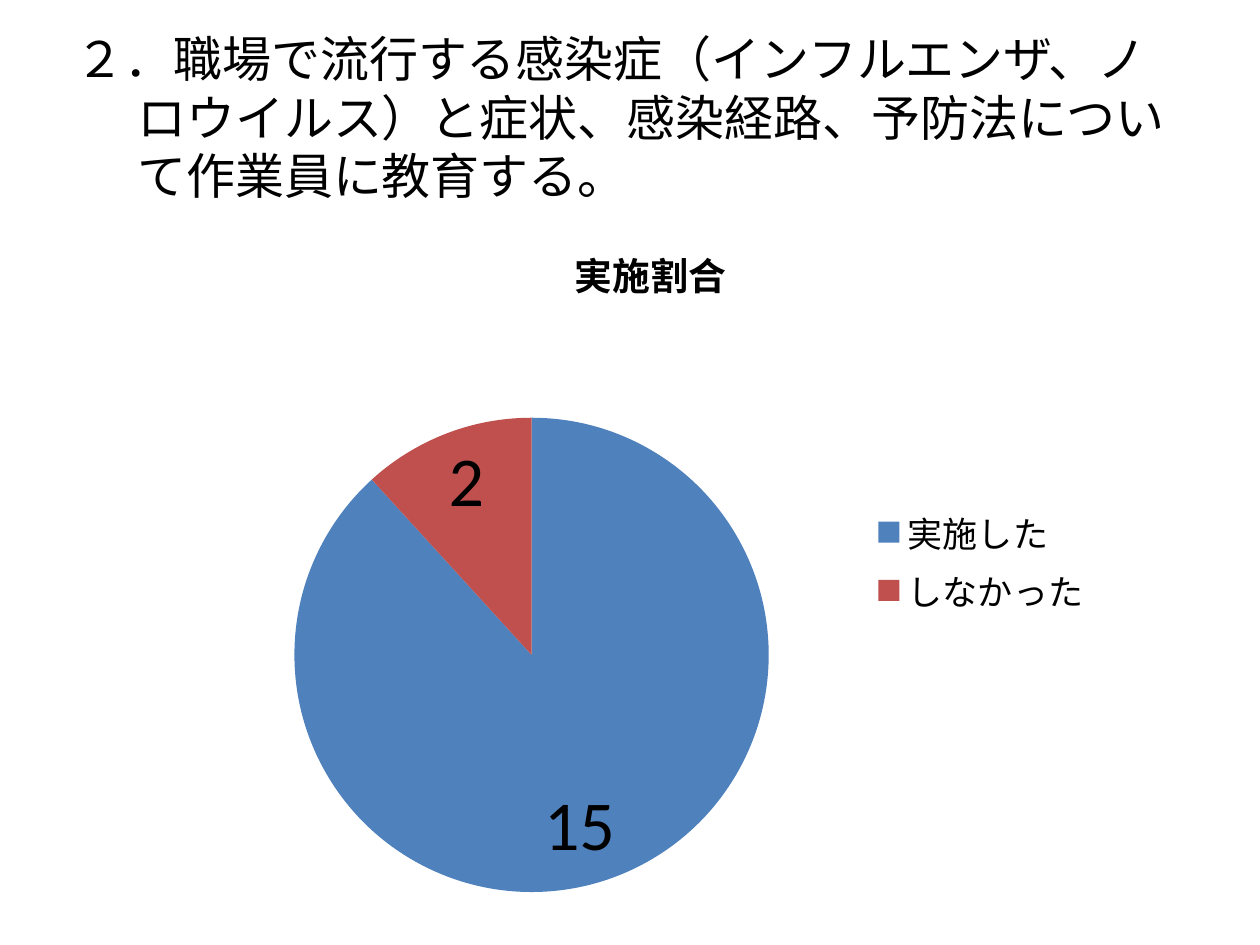
"""Build a slide with a heading and a pie chart of how many workplaces gave the training."""
import dataclasses

import lxml.etree
import pptx
import pptx.chart.chart
import pptx.chart.data
import pptx.dml.color
import pptx.enum.chart
import pptx.enum.text
import pptx.oxml.ns
import pptx.slide
import pptx.text.text
import pptx.util
from pptx.util import Inches


@dataclasses.dataclass(frozen=True)
class Theme:
    """Font, colours and type sizes of the slide."""
    font: str = "Calibri"
    text: str = "000000"
    background: str = "FFFFFF"
    heading_size: float = 28
    chart_size: float = 18
    chart_title_size: float = 21.6
    legend_size: float = 20
    label_size: float = 40


@dataclasses.dataclass(frozen=True)
class Box:
    """A rectangle in inches, or in fractions of a chart."""
    left: float
    top: float
    width: float
    height: float


@dataclasses.dataclass(frozen=True)
class Slice:
    """One slice of the pie."""
    name: str
    value: int
    color: str


THEME = Theme()
HEADING = "２．職場で流行する感染症（インフルエンザ、ノロウイルス）と症状、感染経路、予防法について作業員に教育する。"
HEADING_BOX = Box(0.5, 0.3, 9, 1.25)
HANGING_INDENT = 0.49
CHART_TITLE = "実施割合"
CHART_BOX = Box(1.54, 1.7, 7.24, 5.51)
PIE_BOX = Box(0.11, 0.29, 0.52, 0.69)
SLICES = (Slice("実施した", 15, "4F81BD"), Slice("しなかった", 2, "C0504D"))


def rgb(color: str) -> pptx.dml.color.RGBColor:
    """Turn a hex string into a colour."""
    return pptx.dml.color.RGBColor.from_string(color)


def style_font(font: pptx.text.text.Font, size: float, bold: bool = False) -> None:
    """Give a font the theme's face and colour."""
    font.name = THEME.font
    font.size = pptx.util.Pt(size)
    font.bold = bold
    font.color.rgb = rgb(THEME.text)


def add_heading(slide: pptx.slide.Slide) -> None:
    """Fill the title placeholder with a hanging paragraph."""
    shape = slide.shapes.title
    shape.left, shape.top = Inches(HEADING_BOX.left), Inches(HEADING_BOX.top)
    shape.width, shape.height = Inches(HEADING_BOX.width), Inches(HEADING_BOX.height)
    frame = shape.text_frame
    frame.word_wrap = True
    frame.auto_size = pptx.enum.text.MSO_AUTO_SIZE.NONE
    frame.vertical_anchor = pptx.enum.text.MSO_ANCHOR.MIDDLE
    paragraph = frame.paragraphs[0]
    paragraph.alignment = pptx.enum.text.PP_ALIGN.LEFT
    properties = paragraph._p.get_or_add_pPr()
    properties.set("marL", str(Inches(HANGING_INDENT)))
    properties.set("indent", str(Inches(-HANGING_INDENT)))
    run = paragraph.add_run()
    run.text = HEADING
    style_font(run.font, THEME.heading_size)


def place_pie(chart: pptx.chart.chart.Chart, box: Box) -> None:
    """Fix the inner plot area at fractions of the chart."""
    qualify = pptx.oxml.ns.qn
    plot_area = chart._chartSpace.chart.plotArea
    for old_layout in plot_area.findall(qualify("c:layout")):
        plot_area.remove(old_layout)
    layout = lxml.etree.Element(qualify("c:layout"))
    manual = lxml.etree.SubElement(layout, qualify("c:manualLayout"))
    settings = (
        ("layoutTarget", "inner"), ("xMode", "edge"), ("yMode", "edge"),
        ("x", box.left), ("y", box.top), ("w", box.width), ("h", box.height),
    )
    for name, value in settings:
        lxml.etree.SubElement(manual, qualify(f"c:{name}")).set("val", str(value))
    plot_area.insert(0, layout)


def add_pie(slide: pptx.slide.Slide, slices: tuple[Slice, ...]) -> None:
    """Add the pie chart with its title, legend and value labels."""
    data = pptx.chart.data.CategoryChartData()
    data.categories = [part.name for part in slices]
    data.add_series(CHART_TITLE, [part.value for part in slices])
    chart = slide.shapes.add_chart(
        pptx.enum.chart.XL_CHART_TYPE.PIE,
        Inches(CHART_BOX.left), Inches(CHART_BOX.top),
        Inches(CHART_BOX.width), Inches(CHART_BOX.height), data,
    ).chart
    style_font(chart.font, THEME.chart_size)

    chart.has_title = True
    run = chart.chart_title.text_frame.paragraphs[0].add_run()
    run.text = CHART_TITLE
    style_font(run.font, THEME.chart_title_size, bold=True)

    chart.has_legend = True
    chart.legend.position = pptx.enum.chart.XL_LEGEND_POSITION.RIGHT
    chart.legend.include_in_layout = False
    style_font(chart.legend.font, THEME.legend_size)

    plot = chart.plots[0]
    plot.vary_by_categories = True
    series = plot.series[0]
    for index, part in enumerate(slices):
        fill = series.points[index].format.fill
        fill.solid()
        fill.fore_color.rgb = rgb(part.color)
    labels = series.data_labels
    labels.show_value = True
    labels.position = pptx.enum.chart.XL_LABEL_POSITION.INSIDE_END
    style_font(labels.font, THEME.label_size)
    place_pie(chart, PIE_BOX)


def main() -> None:
    """Create the presentation and save it."""
    presentation = pptx.Presentation()
    presentation.slide_width, presentation.slide_height = Inches(10), Inches(7.5)
    slide = presentation.slides.add_slide(presentation.slide_layouts.get_by_name("Title Only"))
    slide.background.fill.solid()
    slide.background.fill.fore_color.rgb = rgb(THEME.background)
    add_heading(slide)
    add_pie(slide, SLICES)
    presentation.save("out.pptx")


if __name__ == "__main__":
    main()
